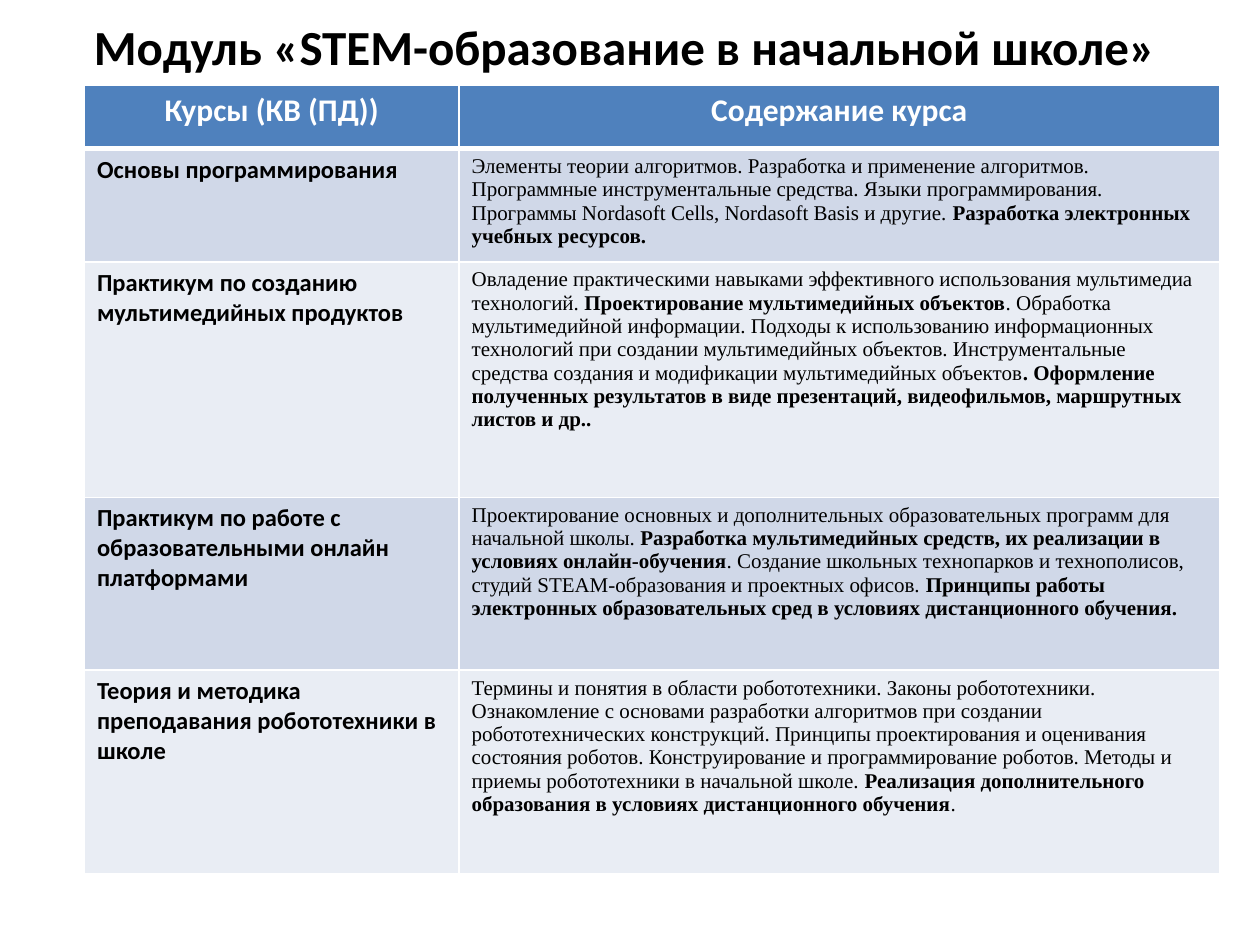
from itertools import cycle

from lxml import etree
from pptx import Presentation
from pptx.dml.color import RGBColor
from pptx.enum.text import MSO_ANCHOR, PP_ALIGN
from pptx.oxml.ns import qn
from pptx.util import Inches, Pt

CENTER, LEFT = PP_ALIGN.CENTER, PP_ALIGN.LEFT
MIDDLE = MSO_ANCHOR.MIDDLE

COLORS = {"text": "000000", "header": "4F81BD", "light": "FFFFFF",
          "band_dark": "D0D8E8", "band_pale": "E9EDF4"}
FORMATS = {
    "title": {"name": "Calibri", "size": Pt(28), "bold": True},
    "header": {"name": "Calibri", "size": Pt(18), "bold": True},
    "course": {"name": "Calibri", "size": Pt(14), "bold": True},
    "content": {"name": "Times New Roman", "size": Pt(12), "bold": False},
}

SLIDE_SIZE = (10, 7.5)
TITLE_BOX = (0.5, 0.13, 9, 0.47)
TABLE_BOX = (0.67, 0.68, 9.01, 6.23)
COLUMN_SHARES = (0.33, 0.67)
ROW_SHARES = (0.08, 0.14, 0.3, 0.22, 0.26)
THIN, THICK = 1, 3

TITLE = "Модуль «STEM-образование в начальной школе» "
HEADERS = ("Курсы (КВ (ПД))", "Содержание курса")
# Course name and its content, whose parts are plain and bold in turn
COURSES = [
    ("Основы программирования", [
        "Элементы теории алгоритмов. Разработка и применение алгоритмов. "
        "Программные инструментальные средства. Языки программирования. "
        "Программы Nordasoft Cells, Nordasoft Basis и другие. ",
        "Разработка электронных учебных ресурсов."]),
    ("Практикум по созданию мультимедийных продуктов", [
        "Овладение практическими навыками эффективного использования "
        "мультимедиа технологий. ",
        "Проектирование мультимедийных объектов",
        ". Обработка мультимедийной информации. Подходы к использованию "
        "информационных технологий при создании мультимедийных объектов. "
        "Инструментальные средства создания и модификации мультимедийных "
        "объектов",
        ". Оформление полученных результатов в виде презентаций, "
        "видеофильмов, маршрутных листов и др.."]),
    ("Практикум по работе с образовательными онлайн платформами", [
        "Проектирование основных и дополнительных образовательных программ "
        "для начальной школы. ",
        "Разработка мультимедийных средств, их реализации в условиях "
        "онлайн-обучения",
        ". Создание школьных технопарков и технополисов, студий "
        "STEAM-образования и проектных офисов. ",
        "Принципы работы электронных образовательных сред в условиях "
        "дистанционного обучения."]),
    ("Теория и методика преподавания робототехники в школе", [
        "Термины и понятия в области робототехники. Законы робототехники. "
        "Ознакомление с основами разработки алгоритмов при создании "
        "робототехнических конструкций. Принципы проектирования и оценивания "
        "состояния роботов. Конструирование и программирование роботов. "
        "Методы и приемы робототехники в начальной школе. ",
        "Реализация дополнительного образования в условиях дистанционного "
        "обучения",
        "."]),
]


def write(frame, parts, role, color="text", align=LEFT):
    """Fill one paragraph; every second part is bold."""
    paragraph = frame.paragraphs[0]
    paragraph.alignment = align
    for part, emphasis in zip(parts, cycle((False, True))):
        run = paragraph.add_run()
        run.text = part
        for key, value in FORMATS[role].items():
            setattr(run.font, key, value)
        if emphasis:
            run.font.bold = True
        run.font.color.rgb = RGBColor.from_string(COLORS[color])


def paint_cell(cell, fill, top, bottom):
    """Set the fill and white borders, with top and bottom widths in points."""
    cell.fill.solid()
    cell.fill.fore_color.rgb = RGBColor.from_string(COLORS[fill])
    properties = cell._tc.get_or_add_tcPr()
    widths = {"a:lnL": THIN, "a:lnR": THIN, "a:lnT": top, "a:lnB": bottom}
    for index, (edge, width) in enumerate(widths.items()):
        line = etree.Element(qn(edge), w=str(Pt(width)))
        solid = etree.SubElement(line, qn("a:solidFill"))
        etree.SubElement(solid, qn("a:srgbClr"), val=COLORS["light"])
        properties.insert(index, line)


def add_title(slide, box):
    frame = slide.shapes.add_textbox(*map(Inches, box)).text_frame
    frame.word_wrap = True
    frame.vertical_anchor = MIDDLE
    write(frame, [TITLE], "title", align=CENTER)


def add_course_table(slide, box):
    table = slide.shapes.add_table(
        len(ROW_SHARES), len(COLUMN_SHARES), *map(Inches, box)).table
    for column, share in zip(table.columns, COLUMN_SHARES):
        column.width = Inches(box[2] * share)
    for row, share in zip(table.rows, ROW_SHARES):
        row.height = Inches(box[3] * share)

    for column, header in enumerate(HEADERS):
        cell = table.cell(0, column)
        write(cell.text_frame, [header], "header", "light", CENTER)
        paint_cell(cell, "header", THIN, THICK)

    bands = cycle(("band_dark", "band_pale"))
    for row, ((course, content), band) in enumerate(zip(COURSES, bands), 1):
        name_cell, content_cell = table.cell(row, 0), table.cell(row, 1)
        write(name_cell.text_frame, [course], "course")
        write(content_cell.text_frame, content, "content")
        for cell in (name_cell, content_cell):
            paint_cell(cell, band, THICK if row == 1 else THIN, THIN)


def main():
    deck = Presentation()
    deck.slide_width, deck.slide_height = map(Inches, SLIDE_SIZE)
    slide = deck.slides.add_slide(deck.slide_layouts[6])
    add_title(slide, TITLE_BOX)
    add_course_table(slide, TABLE_BOX)
    deck.save("out.pptx")


if __name__ == "__main__":
    main()
